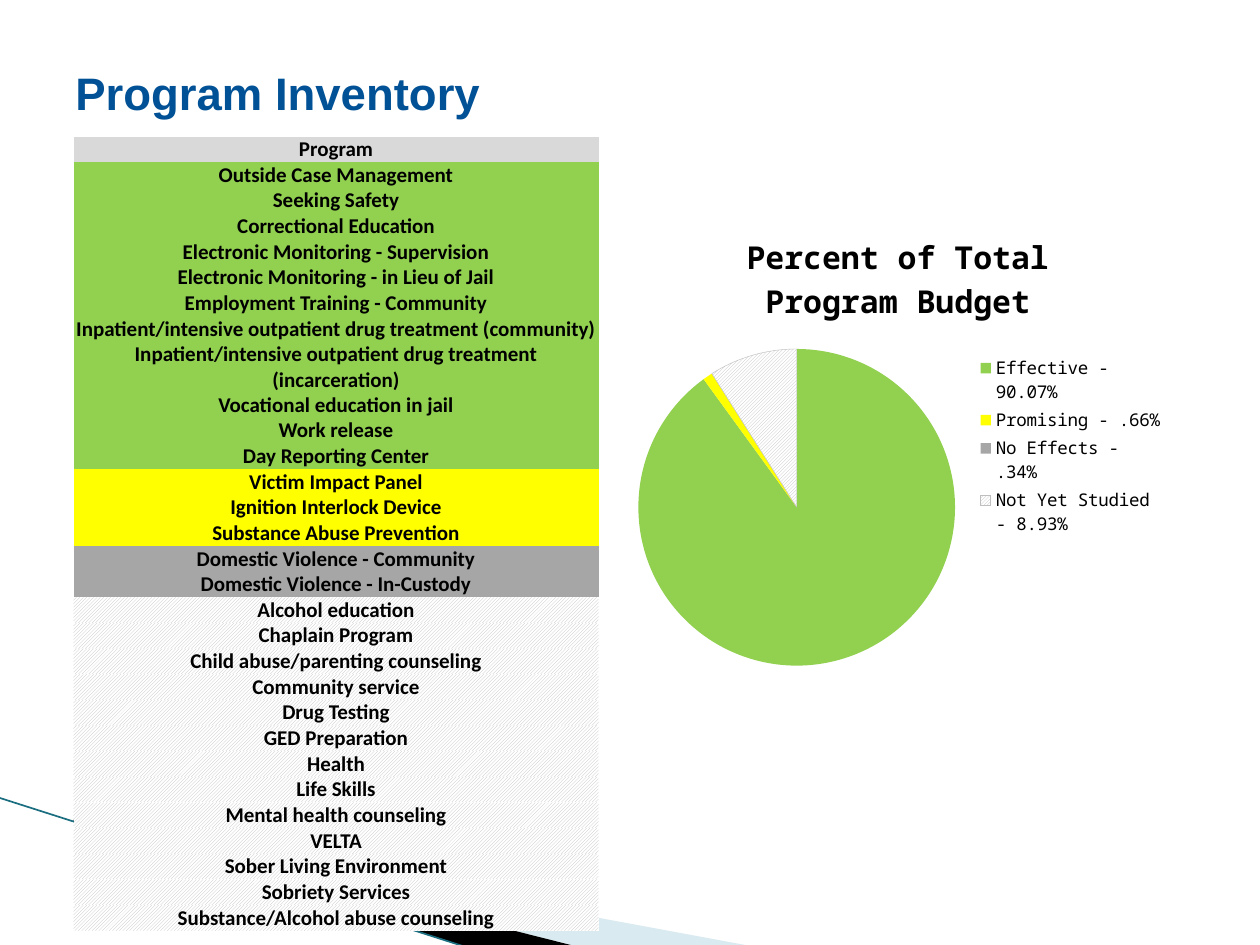
from lxml import etree
from pptx import Presentation
from pptx.chart.data import CategoryChartData
from pptx.dml.color import RGBColor
from pptx.enum.chart import XL_CHART_TYPE, XL_LEGEND_POSITION
from pptx.enum.dml import MSO_PATTERN
from pptx.enum.shapes import MSO_CONNECTOR
from pptx.enum.text import MSO_ANCHOR, PP_ALIGN
from pptx.oxml import parse_xml
from pptx.oxml.ns import nsdecls, qn
from pptx.util import Pt

PIE = XL_CHART_TYPE.PIE
LEGEND_RIGHT = XL_LEGEND_POSITION.RIGHT
STRAIGHT = MSO_CONNECTOR.STRAIGHT
MIDDLE = MSO_ANCHOR.MIDDLE
CENTER = PP_ALIGN.CENTER
HATCH = MSO_PATTERN.DARK_UPWARD_DIAGONAL

BLACK = RGBColor(0x00, 0x00, 0x00)
WHITE = RGBColor(0xFF, 0xFF, 0xFF)
TITLE_BLUE = RGBColor(0x00, 0x51, 0x95)
PALE_BLUE = RGBColor(0xA0, 0xCB, 0xDC)
TEAL = RGBColor(0x1A, 0x6E, 0x80)
HEADER_GRAY = RGBColor(0xD9, 0xD9, 0xD9)
GREEN = RGBColor(0x92, 0xD0, 0x50)
YELLOW = RGBColor(0xFF, 0xFF, 0x00)
GRAY = RGBColor(0xA6, 0xA6, 0xA6)
HATCH_GRAY = RGBColor(0xBF, 0xBF, 0xBF)

NO_GRID_STYLE = "{2D5ABB26-0587-4C30-8999-92F81FD0307C}"
CELL_FORMAT = {"margin_left": 0, "margin_right": 0, "margin_top": 0,
               "margin_bottom": 0, "vertical_anchor": MIDDLE}
TITLE_FONT = {"name": "Arial", "size": Pt(26), "bold": True}
CELL_FONT = {"name": "Calibri", "size": Pt(12), "bold": True}
CHART_FONT = {"name": "Noto Sans Mono", "size": Pt(10), "bold": False}
CHART_TITLE_FONT = {"name": "Noto Sans Mono", "size": Pt(18), "bold": True}

# Each rating: legend label, share of budget, fill (None means hatched), programs
RATINGS = [
    ("Effective - 90.07%", 90, GREEN, [
        "Outside Case Management", "Seeking Safety", "Correctional Education",
        "Electronic Monitoring - Supervision",
        "Electronic Monitoring - in Lieu of Jail",
        "Employment Training - Community",
        "Inpatient/intensive outpatient drug treatment (community)",
        "Inpatient/intensive outpatient drug treatment (incarceration)",
        "Vocational education in jail", "Work release",
        "Day Reporting Center"]),
    ("Promising - .66%", 1, YELLOW, [
        "Victim Impact Panel", "Ignition Interlock Device",
        "Substance Abuse Prevention"]),
    ("No Effects - .34%", 0, GRAY, [
        "Domestic Violence - Community", "Domestic Violence - In-Custody"]),
    ("Not Yet Studied - 8.93%", 9, None, [
        "Alcohol education", "Chaplain Program",
        "Child abuse/parenting counseling", "Community service",
        "Drug Testing", "GED Preparation", "Health", "Life Skills",
        "Mental health counseling", "VELTA", "Sober Living Environment",
        "Sobriety Services", "Substance/Alcohol abuse counseling"]),
]


def apply_format(target, values):
    for name, value in values.items():
        setattr(target, name, value)


def style_font(font, values, color):
    apply_format(font, values)
    font.color.rgb = color


def apply_fill(fill, color):
    """Fill solid, or with the hatch when there is no color."""
    if color is None:
        fill.patterned()
        fill.pattern = HATCH
        fill.fore_color.rgb = HATCH_GRAY
        fill.back_color.rgb = WHITE
    else:
        fill.solid()
        fill.fore_color.rgb = color


def add_wedge(slide, points, color, opacity=100):
    builder = slide.shapes.build_freeform(Pt(points[0][0]), Pt(points[0][1]))
    builder.add_line_segments([(Pt(x), Pt(y)) for x, y in points[1:]])
    shape = builder.convert_to_shape()
    shape.shadow.inherit = False
    apply_fill(shape.fill, color)
    shape.line.fill.background()
    if opacity < 100:
        color_element = shape.fill._xPr.find(".//" + qn("a:srgbClr"))
        alpha = etree.SubElement(color_element, qn("a:alpha"))
        alpha.set("val", str(opacity * 1000))


def add_corner_decoration(slide):
    add_wedge(slide, [(42, 469), (428.4, 540.5), (328.3, 540.5), (42, 468.6)],
              PALE_BLUE, 40)
    add_wedge(slide, [(42, 468.3), (329, 540.7), (267.8, 541.4), (42, 469)], BLACK)
    line = slide.shapes.add_connector(STRAIGHT, Pt(-0.7), Pt(455.8), Pt(267), Pt(541.4))
    line.line.width = Pt(0.95)
    line.line.color.rgb = TEAL
    etree.SubElement(line._element.spPr, qn("a:effectLst"))


def add_title(slide, left, top, width, height):
    text_frame = slide.shapes.add_textbox(
        Pt(left), Pt(top), Pt(width), Pt(height)).text_frame
    apply_format(text_frame, {"word_wrap": True, "vertical_anchor": MIDDLE})
    paragraph = text_frame.paragraphs[0]
    paragraph.text = "Program Inventory"
    style_font(paragraph.font, TITLE_FONT, TITLE_BLUE)


def add_program_table(slide, left, top, width, row_height):
    rows = [("Program", HEADER_GRAY)]
    rows += [(program, color) for _, _, color, programs in RATINGS
             for program in programs]
    frame = slide.shapes.add_table(len(rows), 1, Pt(left), Pt(top), Pt(width),
                                   Pt(row_height * len(rows)))
    table = frame.table
    table.horz_banding = False
    frame._element.find(".//" + qn("a:tableStyleId")).text = NO_GRID_STYLE
    for index, (program, color) in enumerate(rows):
        cell = table.cell(index, 0)
        apply_format(cell, CELL_FORMAT)
        apply_fill(cell.fill, color)
        paragraph = cell.text_frame.paragraphs[0]
        paragraph.text = program
        paragraph.alignment = CENTER
        style_font(paragraph.font, CELL_FONT, BLACK)


def layout_element(x, y, width, height, inner=False):
    """Manual chart layout, in fractions of the chart area."""
    target = '<c:layoutTarget val="inner"/>' if inner else ""
    return parse_xml(
        f'<c:layout {nsdecls("c")}><c:manualLayout>{target}'
        '<c:xMode val="edge"/><c:yMode val="edge"/>'
        f'<c:x val="{x}"/><c:y val="{y}"/><c:w val="{width}"/><c:h val="{height}"/>'
        '</c:manualLayout></c:layout>')


def add_budget_chart(slide, left, top, width, height):
    name = "Percent of Total Program Budget"
    data = CategoryChartData()
    data.categories = [rating[0] for rating in RATINGS]
    data.add_series(name, [rating[1] for rating in RATINGS])
    chart = slide.shapes.add_chart(PIE, Pt(left), Pt(top), Pt(width),
                                   Pt(height), data).chart
    style_font(chart.font, CHART_FONT, BLACK)

    chart.has_title = True
    paragraph = chart.chart_title.text_frame.paragraphs[0]
    paragraph.text = name
    style_font(paragraph.runs[0].font, CHART_TITLE_FONT, BLACK)

    plot = chart.plots[0]
    plot.vary_by_categories = True
    for index, (_, _, color, _) in enumerate(RATINGS):
        point_format = plot.series[0].points[index].format
        apply_fill(point_format.fill, color)
        if color is None:
            point_format.line.width = Pt(0.25)
            point_format.line.color.rgb = HATCH_GRAY
        else:
            point_format.line.fill.background()

    chart.has_legend = True
    apply_format(chart.legend, {"position": LEGEND_RIGHT, "include_in_layout": False})
    legend = chart.legend._element
    for old_layout in legend.findall(qn("c:layout")):
        legend.remove(old_layout)
    legend.find(qn("c:legendPos")).addnext(layout_element(0.64, 0.3, 0.34, 0.4))

    plot_area = chart._chartSpace.find(".//" + qn("c:plotArea"))
    for old_layout in plot_area.findall(qn("c:layout")):
        plot_area.remove(old_layout)
    pie_size = 181
    plot_area.insert(0, layout_element(10.8 / width, 79.5 / height, pie_size / width,
                                       pie_size / height, inner=True))


def main():
    presentation = Presentation()
    presentation.slide_width = Pt(720)
    presentation.slide_height = Pt(540)
    slide = presentation.slides.add_slide(presentation.slide_layouts[6])
    add_corner_decoration(slide)
    add_title(slide, 36, 21.6, 648, 62.6)
    add_program_table(slide, 42, 78, 300, 14.68)
    add_budget_chart(slide, 354, 120, 318, 270)
    presentation.save("out.pptx")


if __name__ == "__main__":
    main()
